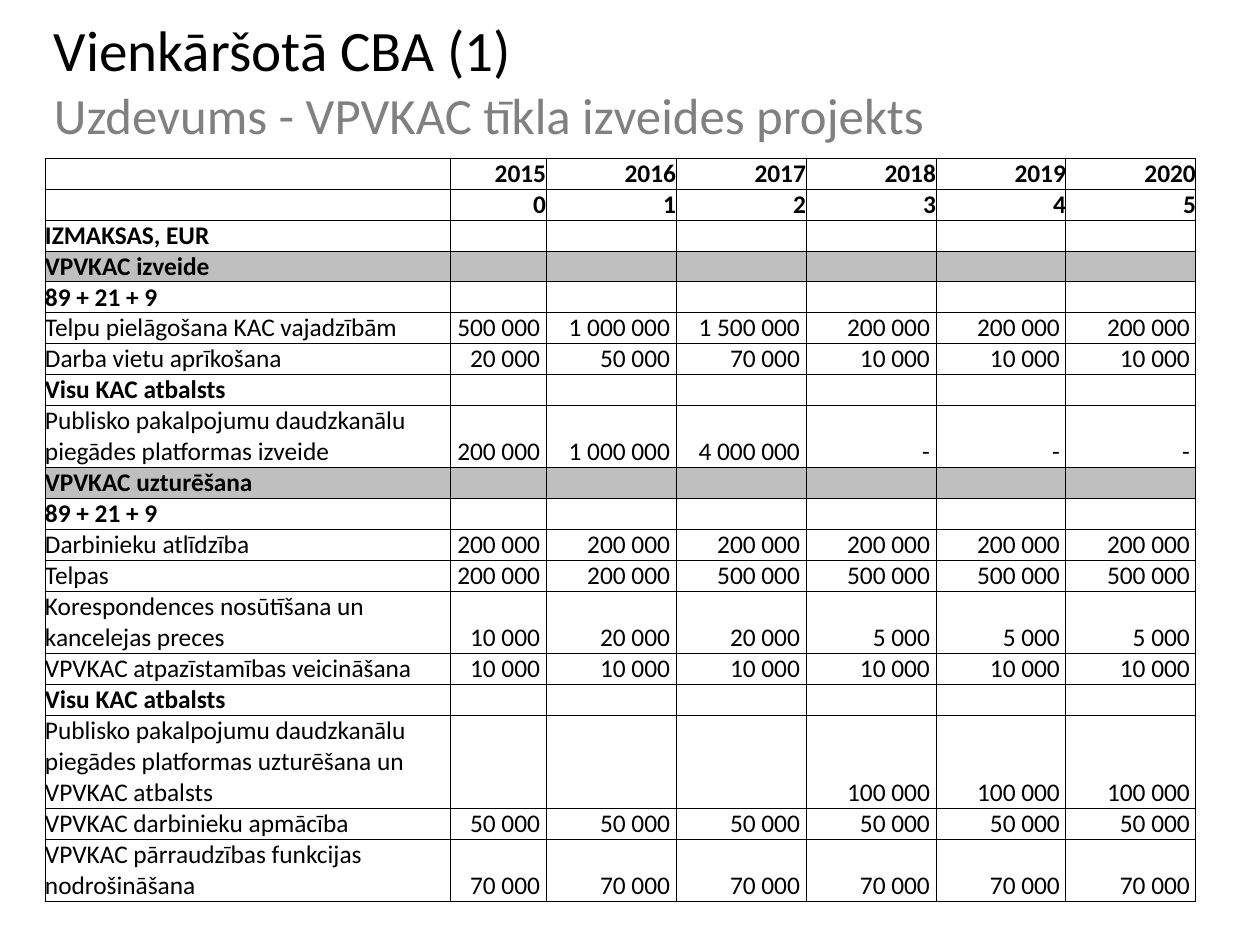
from lxml.etree import SubElement
from pptx import Presentation
from pptx.dml.color import RGBColor
from pptx.enum.text import MSO_ANCHOR as Anchor, PP_ALIGN as Align
from pptx.oxml import parse_xml
from pptx.oxml.ns import nsdecls, qn
from pptx.util import Pt

# Content: a row is its kind, label, figures and number of label lines
TITLE = "Vienkāršotā CBA (1)"
SUBTITLE = "Uzdevums - VPVKAC tīkla izveides projekts"
NONE = [""] * 6
ROWS = [
    ("head", "", ["2015", "2016", "2017", "2018", "2019", "2020"], 1),
    ("head", "", ["0", "1", "2", "3", "4", "5"], 1),
    ("head", "IZMAKSAS, EUR", NONE, 1),
    ("band", "VPVKAC izveide", NONE, 1),
    ("head", "89 + 21 + 9", NONE, 1),
    ("item", "Telpu pielāgošana KAC vajadzībām",
     [500000, 1000000, 1500000, 200000, 200000, 200000], 1),
    ("item", "Darba vietu aprīkošana", [20000, 50000, 70000, 10000, 10000, 10000], 1),
    ("head", "Visu KAC atbalsts", NONE, 1),
    ("item", "Publisko pakalpojumu daudzkanālu piegādes platformas izveide",
     [200000, 1000000, 4000000, "-", "-", "-"], 2),
    ("band", "VPVKAC uzturēšana", NONE, 1),
    ("head", "89 + 21 + 9", NONE, 1),
    ("item", "Darbinieku atlīdzība", [200000] * 6, 1),
    ("item", "Telpas", [200000] * 2 + [500000] * 4, 1),
    ("item", "Korespondences nosūtīšana un kancelejas preces",
     [10000, 20000, 20000, 5000, 5000, 5000], 2),
    ("item", "VPVKAC atpazīstamības veicināšana", [10000] * 6, 1),
    ("head", "Visu KAC atbalsts", NONE, 1),
    ("item", "Publisko pakalpojumu daudzkanālu piegādes platformas uzturēšana "
     "un VPVKAC atbalsts", [""] * 3 + [100000] * 3, 3),
    ("item", "VPVKAC darbinieku apmācība", [50000] * 6, 1),
    ("item", "VPVKAC pārraudzības funkcijas nodrošināšana", [70000] * 6, 2),
]

# Layout in px
SCALE = 8000
COLUMNS = [405, 96] + [130] * 5
LINE_HEIGHT = 31
FIGURE_INDENT = 6
FONT = "Calibri"
TABLE_SIZE = 16
NBSP = chr(160)

BLACK = RGBColor(0x00, 0x00, 0x00)
GREY = RGBColor(0x80, 0x80, 0x80)
BAND = RGBColor(0xBF, 0xBF, 0xBF)
WHITE = RGBColor(0xFF, 0xFF, 0xFF)


def px(length):
    return int(length * SCALE)


def write(paragraph, text, size=TABLE_SIZE, color=BLACK, bold=False,
          align=Align.LEFT, spacing=1.0):
    paragraph.alignment = align
    paragraph.line_spacing = spacing
    if not text:
        SubElement(paragraph._p, qn("a:endParaRPr"), sz=str(size * 100))
        return
    run = paragraph.add_run()
    run.text = text
    run.font.name, run.font.size = FONT, Pt(size)
    run.font.bold, run.font.color.rgb = bold, color


def add_borders(cell):
    properties = cell._tc.get_or_add_tcPr()
    for place, side in enumerate(("lnL", "lnR", "lnT", "lnB")):
        properties.insert(place, parse_xml(
            f'<a:{side} {nsdecls("a")} w="6350"><a:solidFill>'
            f'<a:srgbClr val="{BLACK}"/></a:solidFill></a:{side}>'))


def clear_margins(box):
    box.margin_left = box.margin_right = box.margin_top = box.margin_bottom = 0


deck = Presentation()
deck.slide_width, deck.slide_height = px(1260), px(945)
slide = deck.slides.add_slide(deck.slide_layouts[6])

# Heading
heading = slide.shapes.add_textbox(px(54), 0, px(1134), px(158)).text_frame
heading.word_wrap = True
heading.vertical_anchor = Anchor.MIDDLE
clear_margins(heading)
lines = heading.paragraphs[0]
write(lines, TITLE, size=36, spacing=1.01)
lines.add_line_break()
write(lines, SUBTITLE, size=32, color=GREY, spacing=1.01)

# Cost table
height = LINE_HEIGHT * sum(row[3] for row in ROWS)
costs = slide.shapes.add_table(len(ROWS), len(COLUMNS), px(45), px(158),
                               px(sum(COLUMNS)), px(height)).table
costs.first_row = costs.horz_banding = False
for column, width in zip(costs.columns, COLUMNS):
    column.width = px(width)

for r, (kind, label, figures, line_count) in enumerate(ROWS):
    costs.rows[r].height = px(LINE_HEIGHT * line_count)
    for c, value in enumerate([label] + figures):
        cell = costs.cell(r, c)
        clear_margins(cell)
        if c and kind == "item":
            cell.margin_right = px(FIGURE_INDENT)
        cell.vertical_anchor = Anchor.BOTTOM
        cell.fill.solid()
        cell.fill.fore_color.rgb = BAND if kind == "band" else WHITE
        add_borders(cell)
        text = f"{value:,}".replace(",", NBSP) if isinstance(value, int) else value
        write(cell.text_frame.paragraphs[0], text, bold=kind != "item",
              align=Align.RIGHT if c else Align.LEFT)

deck.save("out.pptx")
